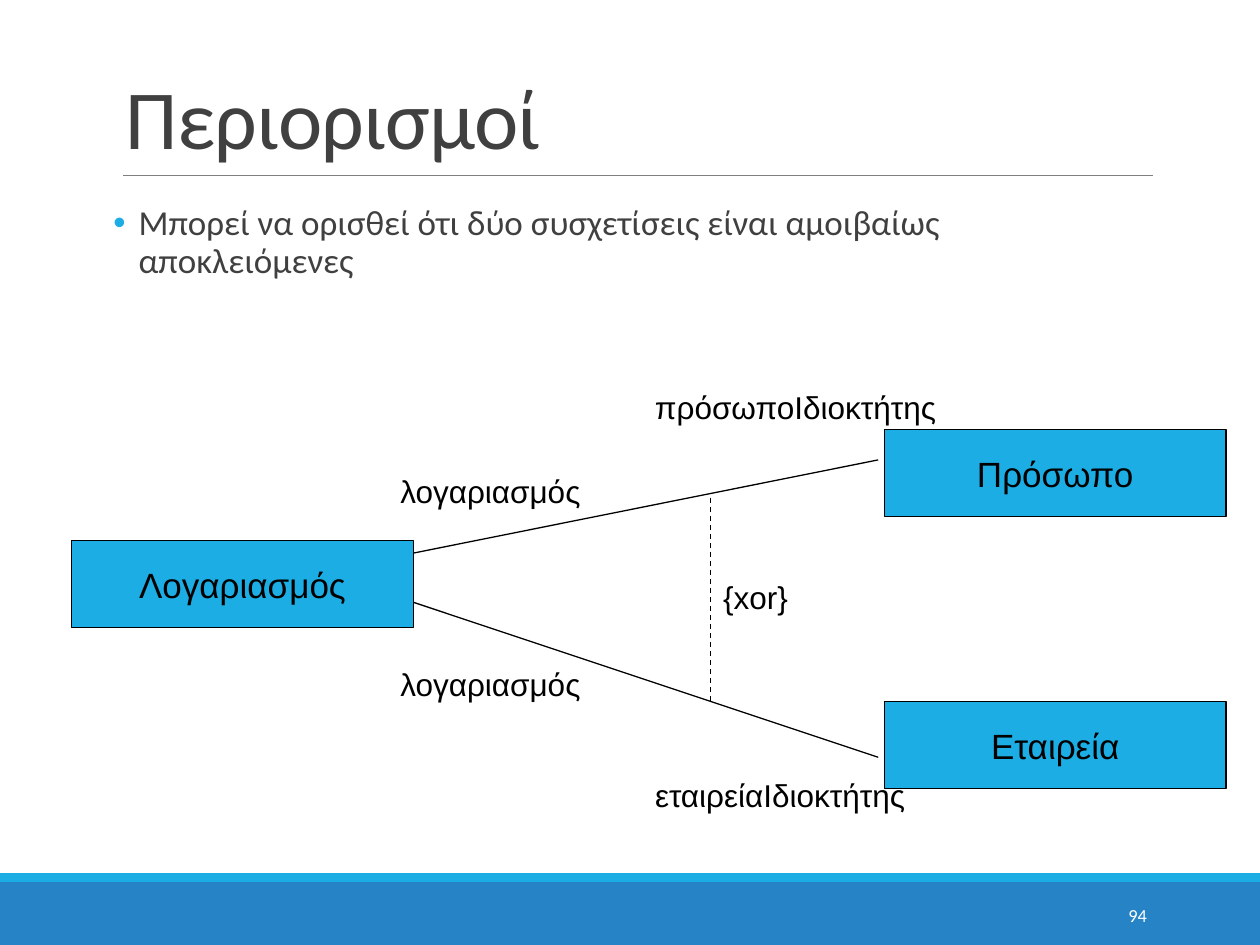
from lxml.etree import SubElement
from pptx import Presentation
from pptx.dml.color import RGBColor
from pptx.enum.dml import MSO_LINE
from pptx.enum.shapes import MSO_CONNECTOR, MSO_SHAPE
from pptx.enum.text import MSO_ANCHOR, MSO_AUTO_SIZE, PP_ALIGN
from pptx.oxml.ns import qn
from pptx.util import Inches, Pt

BLACK = RGBColor(0x00, 0x00, 0x00)
WHITE = RGBColor(0xFF, 0xFF, 0xFF)
GRAY = RGBColor(0x80, 0x80, 0x80)
DARK_GRAY = RGBColor(0x40, 0x40, 0x40)
BLUE = RGBColor(0x26, 0x83, 0xC6)
CYAN = RGBColor(0x1C, 0xAD, 0xE4)

CLASS_WIDTH, CLASS_HEIGHT = 2.71, 0.69
LABEL_HEIGHT = 0.4


def set_text(shape, text, size, color, font="Arial", align=PP_ALIGN.LEFT,
             anchor=MSO_ANCHOR.TOP, wrap=True):
    text_frame = shape.text_frame
    text_frame.text = text
    text_frame.word_wrap = wrap
    text_frame.vertical_anchor = anchor
    paragraph = text_frame.paragraphs[0]
    paragraph.alignment = align
    run = paragraph.runs[0]
    run.font.name = font
    run.font.size = Pt(size)
    run.font.color.rgb = color
    return paragraph


def add_text(slide, left, top, width, height, text, size, color, **options):
    box = slide.shapes.add_textbox(Inches(left), Inches(top), Inches(width), Inches(height))
    return box, set_text(box, text, size, color, **options)


def add_rectangle(slide, left, top, width, height, fill):
    shape = slide.shapes.add_shape(MSO_SHAPE.RECTANGLE, Inches(left), Inches(top),
                                   Inches(width), Inches(height))
    shape.shadow.inherit = False
    shape.fill.solid()
    shape.fill.fore_color.rgb = fill
    shape.line.fill.background()
    return shape


def add_class(slide, left, top, name):
    shape = add_rectangle(slide, left, top, CLASS_WIDTH, CLASS_HEIGHT, CYAN)
    shape.line.color.rgb = BLACK
    shape.line.width = Pt(0.75)
    set_text(shape, name, 20, BLACK, align=PP_ALIGN.CENTER,
             anchor=MSO_ANCHOR.MIDDLE, wrap=False)


def add_label(slide, left, top, width, text):
    box, _ = add_text(slide, left, top, width, LABEL_HEIGHT, text, 18, BLACK, wrap=False)
    box.text_frame.auto_size = MSO_AUTO_SIZE.SHAPE_TO_FIT_TEXT


def add_line(slide, start, end, color=BLACK, width=0.75, dash=None):
    line = slide.shapes.add_connector(MSO_CONNECTOR.STRAIGHT,
                                      *map(Inches, start), *map(Inches, end))
    line.line.color.rgb = color
    line.line.width = Pt(width)
    if dash is not None:
        line.line.dash_style = dash
    SubElement(line.element.spPr, qn("a:effectLst"))


def add_bullet(paragraph, indent, color):
    properties = paragraph._p.get_or_add_pPr()
    properties.set("marL", str(Inches(indent)))
    properties.set("indent", str(-Inches(indent)))
    bullet_color = SubElement(properties, qn("a:buClr"))
    SubElement(bullet_color, qn("a:srgbClr"), val=str(color))
    SubElement(properties, qn("a:buFont"), typeface="Arial")
    SubElement(properties, qn("a:buChar"), char="•")


def add_frame(slide):
    # Footer bands, title rule and page number
    add_rectangle(slide, 0, 7, 10, 0.5, BLUE)
    add_rectangle(slide, 0, 6.93, 10, 0.07, CYAN)
    add_line(slide, (0.98, 1.39), (9.15, 1.39), GRAY, 0.5)
    add_text(slide, 8.12, 7.06, 1.08, 0.4, "94", 10.5, WHITE, font="Calibri",
             align=PP_ALIGN.RIGHT, anchor=MSO_ANCHOR.MIDDLE)


def add_heading(slide):
    # Title
    _, title = add_text(slide, 0.9, 0.11, 8.25, 1.26, "Περιορισμοί", 48, DARK_GRAY,
                        font="Calibri", anchor=MSO_ANCHOR.BOTTOM)
    title.line_spacing = 0.85
    title.runs[0].font._element.set("spc", "-50")

    # Bulleted statement
    body, statement = add_text(
        slide, 0.9, 1.58, 8.25, 5.27,
        "Μπορεί να ορισθεί ότι δύο συσχετίσεις είναι αμοιβαίως αποκλειόμενες",
        20, DARK_GRAY, font="Calibri")
    body.text_frame.margin_left = body.text_frame.margin_right = 0
    statement.line_spacing = 0.9
    statement.space_before = Pt(12)
    statement.space_after = Pt(2)
    add_bullet(statement, 0.2, CYAN)


def add_diagram(slide):
    # Classes
    add_class(slide, 0.57, 4.29, "Λογαριασμός")
    add_class(slide, 7.02, 3.41, "Πρόσωπο")
    add_class(slide, 7.02, 5.57, "Εταιρεία")

    # Associations and the constraint between them
    add_line(slide, (3.28, 4.39), (6.97, 3.65))
    add_line(slide, (3.28, 4.78), (6.97, 6.01))
    add_line(slide, (5.64, 3.95), (5.64, 5.57), dash=MSO_LINE.DASH)
    add_label(slide, 5.64, 4.54, 0.72, "{xor}")

    # Role names
    for top in (3.7, 5.23):
        add_label(slide, 3.08, top, 1.63, "λογαριασμός")
    add_label(slide, 5.1, 3.03, 2.44, "πρόσωποΙδιοκτήτης")
    add_label(slide, 5.1, 6.11, 2.19, "εταιρείαΙδιοκτήτης")


def main():
    presentation = Presentation()
    presentation.slide_width = Inches(10)
    presentation.slide_height = Inches(7.5)
    slide = presentation.slides.add_slide(presentation.slide_layouts[6])
    add_frame(slide)
    add_heading(slide)
    add_diagram(slide)
    presentation.save("out.pptx")


if __name__ == "__main__":
    main()
